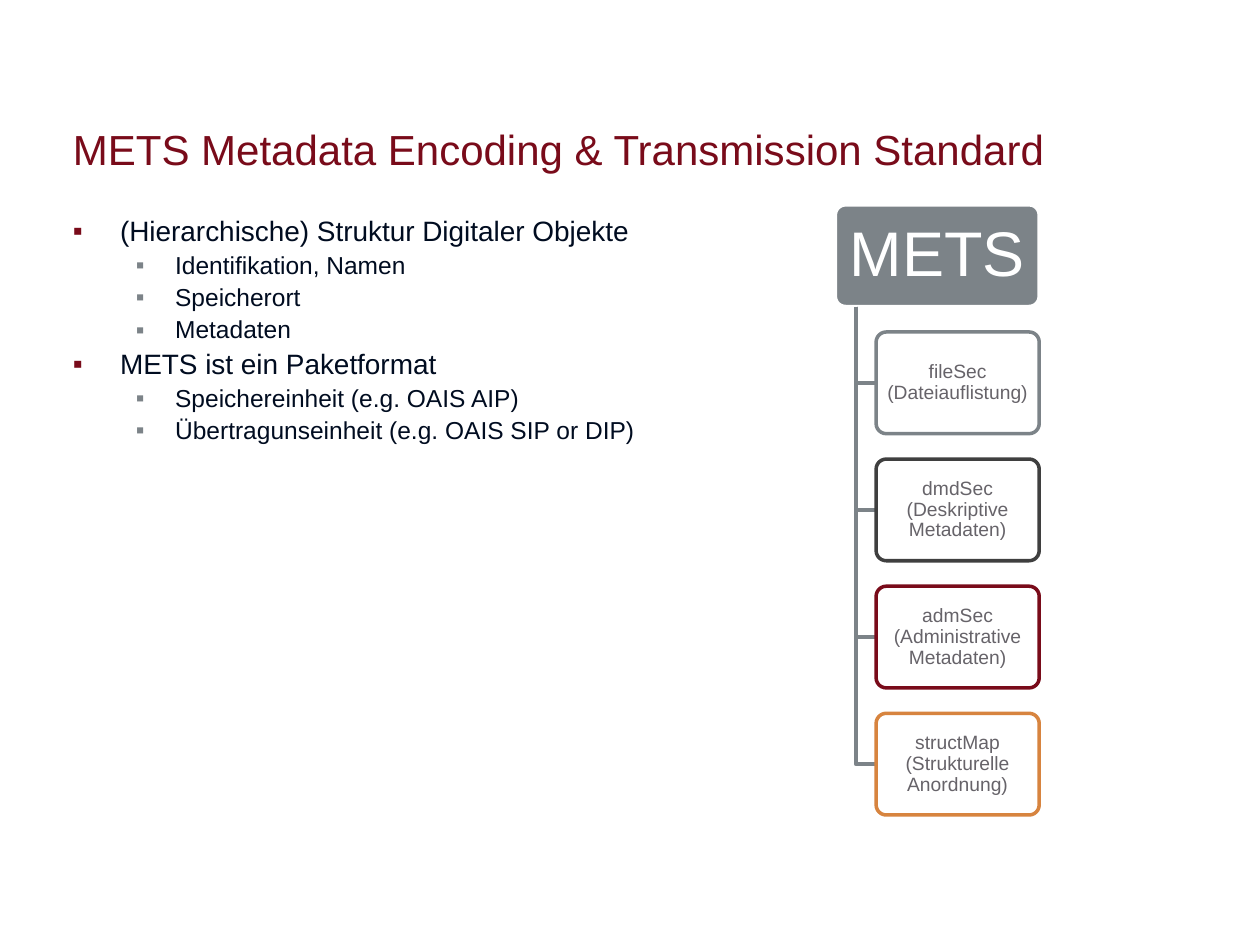
from dataclasses import dataclass

from lxml.etree import SubElement
from pptx import Presentation
from pptx.dml.color import RGBColor
from pptx.enum.shapes import MSO_SHAPE as Preset
from pptx.enum.text import MSO_ANCHOR as Anchor, MSO_AUTO_SIZE as AutoSize, PP_ALIGN as Align
from pptx.oxml.ns import qn
from pptx.util import Cm, Pt


@dataclass(frozen=True)
class Theme:
    font: str = "Arial"
    red: str = "790B1A"
    grey: str = "7C8388"
    charcoal: str = "3F3F3F"
    orange: str = "D7843F"
    ink: str = "000C20"
    label: str = "666369"
    white: str = "FFFFFF"
    title_size: float = 24
    body_sizes: tuple = (16, 14)
    root_size: float = 36
    section_size: float = 11
    line_width: float = 2


THEME = Theme()

TITLE = "METS Metadata Encoding & Transmission Standard"
POINTS = [
    (0, "(Hierarchische) Struktur Digitaler Objekte"),
    (1, "Identifikation, Namen"),
    (1, "Speicherort"),
    (1, "Metadaten"),
    (0, "METS ist ein Paketformat"),
    (1, "Speichereinheit (e.g. OAIS AIP)"),
    (1, "Übertragunseinheit (e.g. OAIS SIP or DIP)"),
]
SECTIONS = [
    ("fileSec (Dateiauflistung)", THEME.grey),
    ("dmdSec (Deskriptive Metadaten)", THEME.charcoal),
    ("admSec (Administrative Metadaten)", THEME.red),
    ("structMap (Strukturelle Anordnung)", THEME.orange),
]
# Per level: left margin, hanging indent (cm), space before (pt), bullet colour
LEVELS = [(0.95, 0.95, 3.7, THEME.red), (2.06, 0.79, 3.2, THEME.grey)]

# Hierarchy geometry in cm
ROOT_LEFT, ROOT_TOP = 16.84, 4.13
ROOT_WIDTH, BOX_HEIGHT = 4.11, 2.05
STEM_X = ROOT_LEFT + 0.1 * ROOT_WIDTH
SECTION_LEFT = ROOT_LEFT + 0.2 * ROOT_WIDTH
SECTION_WIDTH = 0.8 * ROOT_WIDTH
PITCH = 1.25 * BOX_HEIGHT


def rgb(colour):
    return RGBColor.from_string(colour)


def add_run(paragraph, text, size, colour):
    run = paragraph.add_run()
    run.text = text
    run.font.name = THEME.font
    run.font.size = Pt(size)
    run.font.color.rgb = rgb(colour)


def set_frame(frame, inset, anchor):
    frame.word_wrap = True
    frame.auto_size = AutoSize.NONE
    frame.vertical_anchor = anchor
    frame.margin_left = frame.margin_right = Cm(inset)
    frame.margin_top = frame.margin_bottom = Cm(inset)


def place(shape, left, top, width, height):
    shape.left, shape.top = Cm(left), Cm(top)
    shape.width, shape.height = Cm(width), Cm(height)


def style_line(shape, colour):
    shape.shadow.inherit = False
    shape.line.color.rgb = rgb(colour)
    shape.line.width = Pt(THEME.line_width)


def fill_title(title):
    place(title, 1.47, 2.49, 22.43, 1.96)
    set_frame(title.text_frame, 0, Anchor.TOP)
    heading = title.text_frame.paragraphs[0]
    heading.alignment = Align.LEFT
    add_run(heading, TITLE, THEME.title_size, THEME.red)


def add_bullet(paragraph, level):
    margin, hang, _, colour = LEVELS[level]
    props = paragraph._p.get_or_add_pPr()
    props.set("marL", str(Cm(margin)))
    props.set("indent", str(-Cm(hang)))
    SubElement(SubElement(props, qn("a:buClr")), qn("a:srgbClr"), val=colour)
    SubElement(props, qn("a:buFont"), typeface=THEME.font)
    SubElement(props, qn("a:buChar"), char="▪")


def fill_points(body):
    place(body, 1.47, 4.39, 13.44, 12.32)
    frame = body.text_frame
    set_frame(frame, 0, Anchor.TOP)
    for index, (level, text) in enumerate(POINTS):
        point = frame.add_paragraph() if index else frame.paragraphs[0]
        point.level = level
        add_bullet(point, level)
        point.line_spacing = 0.9
        point.space_before = Pt(LEVELS[level][2] if index else 0)
        add_run(point, text, THEME.body_sizes[level], THEME.ink)


def add_box(slide, left, top, width, text, size, fill, line, colour, inset):
    box = slide.shapes.add_shape(
        Preset.ROUNDED_RECTANGLE, Cm(left), Cm(top), Cm(width), Cm(BOX_HEIGHT))
    box.adjustments[0] = 0.1
    box.fill.solid()
    box.fill.fore_color.rgb = rgb(fill)
    style_line(box, line)
    set_frame(box.text_frame, inset, Anchor.MIDDLE)
    caption = box.text_frame.paragraphs[0]
    caption.alignment = Align.CENTER
    caption.line_spacing = 0.9
    add_run(caption, text, size, colour)
    return box


def make_translucent(box, percent):
    colour = box._element.spPr.find(qn("a:solidFill"))[0]
    SubElement(colour, qn("a:alpha"), val=str(percent * 1000))


def add_branch(slide, end_y):
    start_y = ROOT_TOP + BOX_HEIGHT
    outline = slide.shapes.build_freeform(Cm(STEM_X), Cm(start_y))
    outline.add_line_segments(
        [(Cm(STEM_X), Cm(end_y)), (Cm(SECTION_LEFT), Cm(end_y))], close=False)
    branch = outline.convert_to_shape()
    branch.fill.background()
    style_line(branch, THEME.grey)


def add_hierarchy(slide):
    add_box(slide, ROOT_LEFT, ROOT_TOP, ROOT_WIDTH, "METS", THEME.root_size,
            THEME.grey, THEME.white, THEME.white, 0.15)
    for row, (text, line) in enumerate(SECTIONS, start=1):
        top = ROOT_TOP + row * PITCH
        add_branch(slide, top + BOX_HEIGHT / 2)
        section = add_box(slide, SECTION_LEFT, top, SECTION_WIDTH, text,
                          THEME.section_size, THEME.white, line, THEME.label, 0.05)
        make_translucent(section, 90)


def main():
    deck = Presentation()
    deck.slide_width, deck.slide_height = Cm(25.4), Cm(19.05)
    slide = deck.slides.add_slide(deck.slide_layouts[1])

    # Title and list
    fill_title(slide.shapes.title)
    fill_points(slide.placeholders[1])

    # METS and its sections
    add_hierarchy(slide)

    deck.save("out.pptx")


if __name__ == "__main__":
    main()
